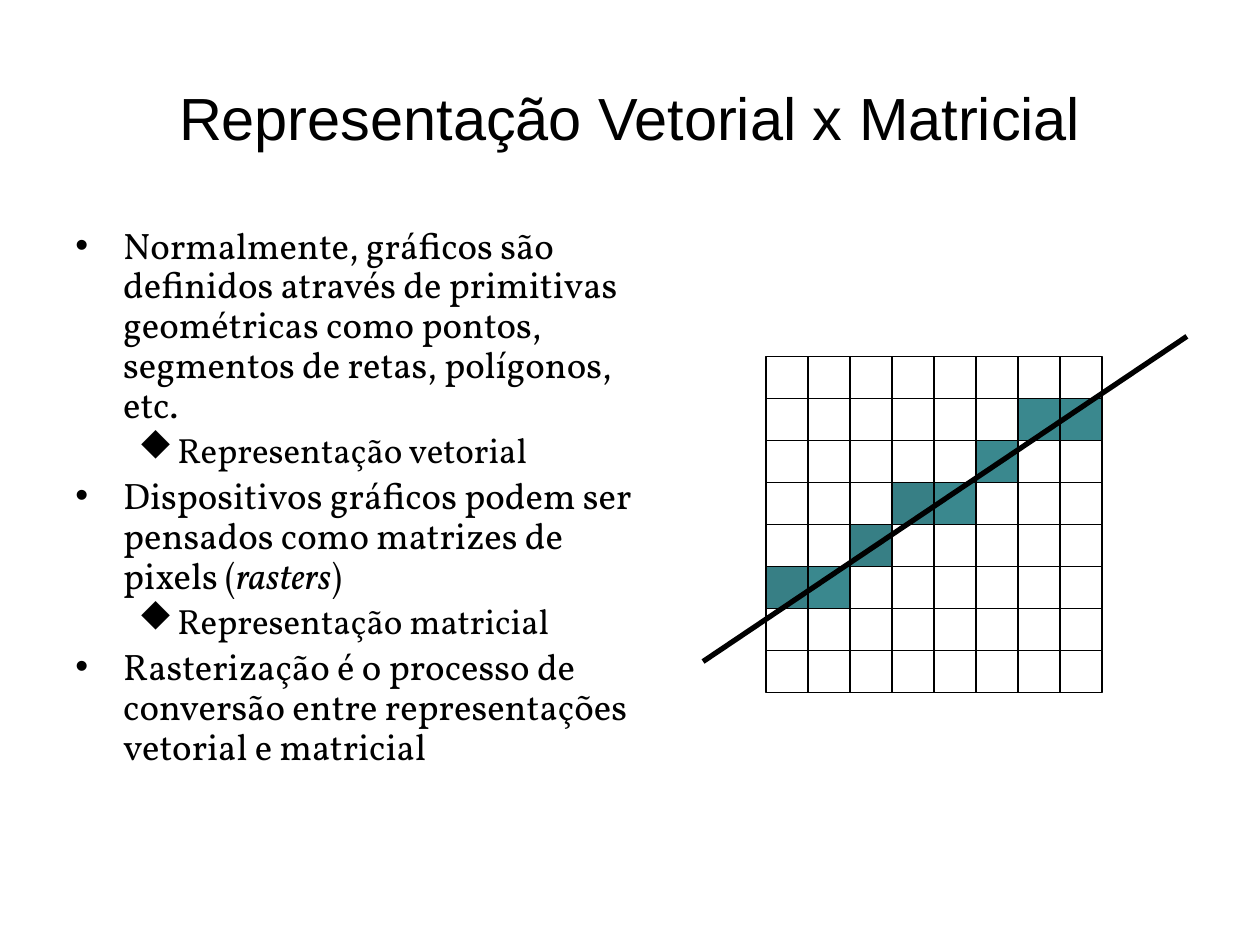
from lxml import etree
from pptx import Presentation
from pptx.dml.color import RGBColor
from pptx.enum import shapes, text
from pptx.oxml.ns import qn
from pptx.util import Inches, Pt

TITLE = "Representação Vetorial x Matricial"
# Each paragraph: level, then (text, italic) spans
BODY = [
    (0, [("Normalmente, gráficos são definidos através de primitivas geométricas "
          "como pontos, segmentos de retas, polígonos, etc.", False)]),
    (1, [("Representação vetorial", False)]),
    (0, [("Dispositivos gráficos podem ser pensados como matrizes de pixels (", False),
         ("rasters", True), (")", False)]),
    (1, [("Representação matricial", False)]),
    (0, [("Rasterização é o processo de conversão entre representações "
          "vetorial e matricial", False)]),
]
# The letter u is a solid diamond in the Wingdings symbol font
LEVELS = [
    dict(bullet="•", bullet_font="Arial", charset="0",
         left=0.38, hang=0.38, size=21, leading=22.7),
    dict(bullet="u", bullet_font="Wingdings", charset="2",
         left=0.81, hang=0.31, size=20, leading=21.6),
]
BLACK, TEAL, DARK_TEAL = "000000", "3A888E", "377F85"
# Lit pixels: (row, column) -> colour
PIXELS = {
    (1, 6): TEAL, (1, 7): TEAL,
    (2, 5): TEAL,
    (3, 3): DARK_TEAL, (3, 4): TEAL,
    (4, 2): DARK_TEAL,
    (5, 0): DARK_TEAL, (5, 1): TEAL,
}
GRID_LEFT, GRID_TOP, GRID_COUNT = 6.08, 2.83, 8
CELL = 1 / 3
SEGMENT = (5.58, 5.25, 9.42, 2.67)


def color(value):
    return RGBColor.from_string(value)


def add_span(para, words, size, font, italic=False):
    span = para.add_run()
    span.text = words
    span.font.size = Pt(size)
    span.font.name = font
    span.font.italic = italic
    span.font.color.rgb = color(BLACK)


def set_bullet(para, style):
    props = para._p.get_or_add_pPr()
    props.set("marL", str(Inches(style["left"])))
    props.set("indent", str(-Inches(style["hang"])))
    font = etree.SubElement(props, qn("a:buFont"))
    font.set("typeface", style["bullet_font"])
    font.set("charset", style["charset"])
    etree.SubElement(props, qn("a:buChar")).set("char", style["bullet"])


def add_title(page):
    title = page.shapes.title
    title.left, title.top = Inches(0.5), Inches(0.3)
    title.width, title.height = Inches(9), Inches(1.25)
    frame = title.text_frame
    frame.vertical_anchor = text.MSO_ANCHOR.MIDDLE
    frame.auto_size = text.MSO_AUTO_SIZE.NONE
    para = frame.paragraphs[0]
    para.alignment = text.PP_ALIGN.CENTER
    add_span(para, TITLE, 34, "Arial")


def add_body(page):
    box = page.shapes.add_textbox(Inches(0.5), Inches(1.75), Inches(4.67), Inches(4.95))
    frame = box.text_frame
    frame.word_wrap = True
    frame.margin_right = 0
    for index, (level, spans) in enumerate(BODY):
        style = LEVELS[level]
        para = frame.add_paragraph() if index else frame.paragraphs[0]
        para.level = level
        para.line_spacing = Pt(style["leading"])
        para.space_before = Pt(4)
        set_bullet(para, style)
        for words, italic in spans:
            add_span(para, words, style["size"], "Vollkorn", italic)


def add_raster(page):
    """Draw the pixel grid with the line segment that it approximates."""
    group = page.shapes.add_group_shape()
    for row in range(GRID_COUNT):
        for column in range(GRID_COUNT):
            cell = group.shapes.add_shape(
                shapes.MSO_SHAPE.RECTANGLE,
                Inches(GRID_LEFT + column * CELL), Inches(GRID_TOP + row * CELL),
                Inches(CELL), Inches(CELL))
            cell.shadow.inherit = False
            cell.line.color.rgb = color(BLACK)
            cell.line.width = Pt(0.75)
            if (row, column) in PIXELS:
                cell.fill.solid()
                cell.fill.fore_color.rgb = color(PIXELS[row, column])
            else:
                cell.fill.background()
    segment = group.shapes.add_connector(
        shapes.MSO_CONNECTOR.STRAIGHT, *(Inches(value) for value in SEGMENT))
    segment.line.color.rgb = color(BLACK)
    segment.line.width = Pt(3)
    etree.SubElement(segment._element.spPr, qn("a:effectLst"))


def main():
    deck = Presentation()
    deck.slide_width, deck.slide_height = Inches(10), Inches(7.5)
    page = deck.slides.add_slide(deck.slide_layouts[5])
    page.background.fill.solid()
    page.background.fill.fore_color.rgb = color("FFFFFF")
    add_title(page)
    add_body(page)
    add_raster(page)
    deck.save("out.pptx")


if __name__ == "__main__":
    main()
